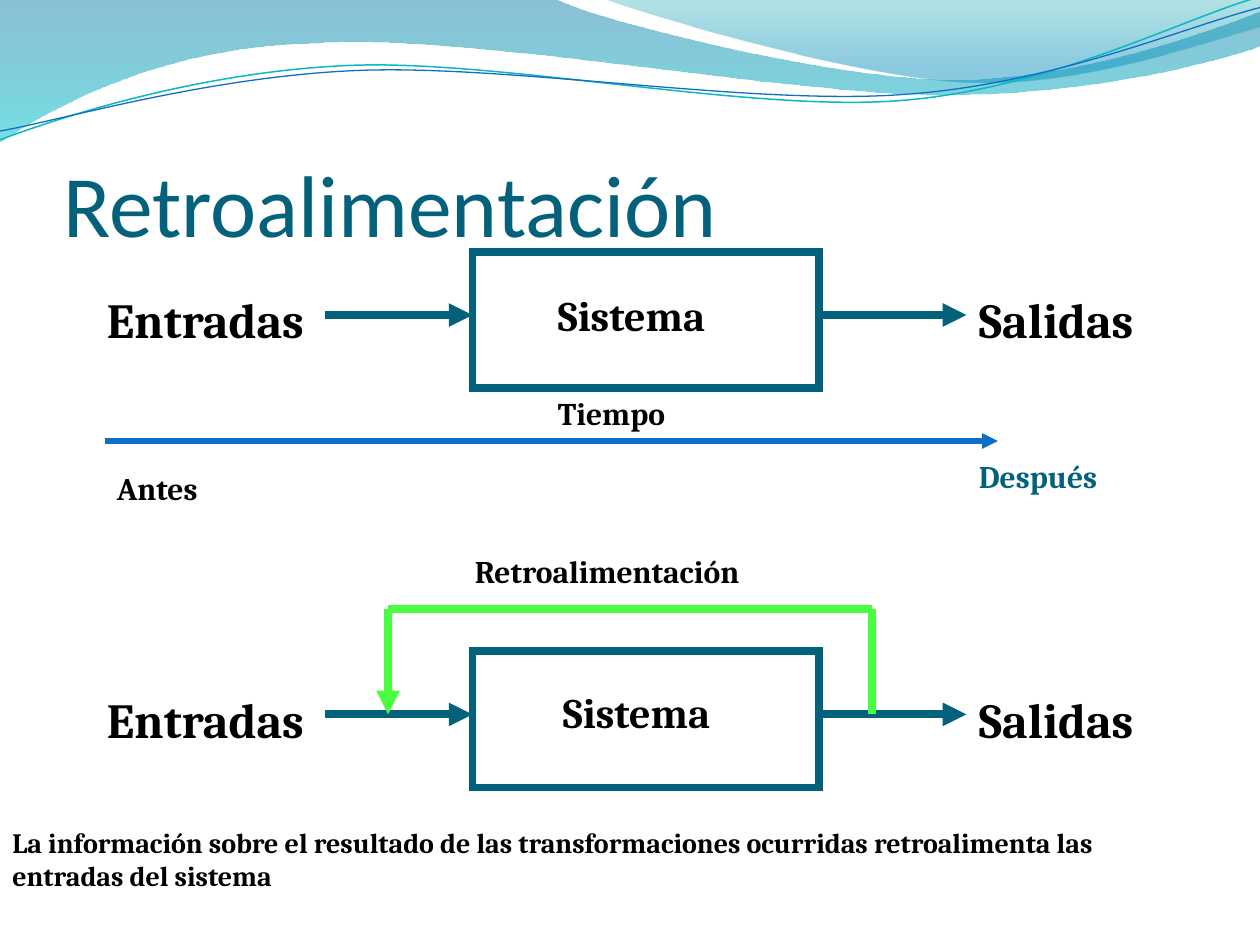
from lxml import etree
from pptx import Presentation
from pptx.dml.color import RGBColor
from pptx.enum import shapes, text
from pptx.oxml.ns import qn
from pptx.util import Inches, Pt

TEAL = RGBColor(0x04, 0x61, 0x7B)
BLUE = RGBColor(0x0F, 0x6F, 0xC6)
GREEN = RGBColor(0x49, 0xFE, 0x40)
BLACK = RGBColor(0, 0, 0)
DEEP_BLUE = RGBColor(0x00, 0x74, 0xA1)
CYAN = RGBColor(0x00, 0xC6, 0xCF)
SEA = RGBColor(0x00, 0xA1, 0xA9)
SKY = RGBColor(0x00, 0x8B, 0xBF)
AQUA = RGBColor(0x0A, 0xB8, 0xBF)

# Waves: a start point, then end points (2 values) or Bezier curves (6 values)
BAND = [(0, 0), (4.4, -0.01), (4.76, 0.17, 6.64, 0.63, 7.58, 0.63),
        (8.53, 0.63, 9.58, 0.26, 10, 0.09), (10.01, 0.36),
        (9.83, 0.44, 8.7, 0.76, 7.46, 0.75), (6.22, 0.75, 3.82, 0.28, 2.57, 0.34),
        (1.29, 0.36, 0.46, 0.83, -0.01, 1.13), (0, 0)]
CREST = [(4.79, -0.01), (5.09, 0.11, 6.82, 0.62, 7.69, 0.65),
         (8.56, 0.69, 9.61, 0.32, 10, 0.21), (10, 0), (4.79, -0.01)]
AQUA_LINE = [(0, 1.11), (0.48, 0.93, 1.58, 0.57, 2.77, 0.52),
             (3.95, 0.47, 5.93, 0.89, 7.13, 0.8), (8.33, 0.71, 9.38, 0.15, 9.98, -0.02)]
BLUE_LINE = [(0, 1.04), (0.47, 0.96, 1.64, 0.61, 2.83, 0.56),
             (4.03, 0.51, 5.97, 0.84, 7.17, 0.75), (8.36, 0.67, 9.41, 0.21, 10, 0.06)]


def add_text(s, box, *lines, size=18, color=BLACK, font="Cambria", bold=True,
             anchor=text.MSO_ANCHOR.TOP, side_inset=0.1, grow=True):
    tf = s.shapes.add_textbox(*map(Inches, box)).text_frame
    tf.word_wrap = True
    tf.auto_size = text.MSO_AUTO_SIZE.SHAPE_TO_FIT_TEXT if grow else text.MSO_AUTO_SIZE.NONE
    tf.vertical_anchor = anchor
    tf.margin_left = tf.margin_right = Inches(side_inset)
    if not grow:
        tf.margin_bottom = 0
    for i, line in enumerate(lines):
        p = tf.add_paragraph() if i else tf.paragraphs[0]
        r = p.add_run()
        r.text = line
        r.font.size, r.font.name, r.font.bold = Pt(size), font, bold
        r.font.color.rgb = color


def add_line(s, start, end, color=TEAL, width=4.5, arrow=True):
    c = s.shapes.add_connector(shapes.MSO_CONNECTOR.STRAIGHT,
                               *map(Inches, (*start, *end)))
    c.line.color.rgb, c.line.width = color, Pt(width)
    if arrow:
        etree.SubElement(c.line._get_or_add_ln(), qn("a:tailEnd"), type="triangle")
    etree.SubElement(c._element.spPr, qn("a:effectLst"))


def add_wave(s, steps, closed):
    ends = [tuple(map(Inches, step[-2:])) for step in steps]
    builder = s.shapes.build_freeform(*ends[0])
    builder.add_line_segments(ends[1:], close=closed)
    sp = builder.convert_to_shape()
    sp.shadow.inherit = False
    # Bend the segments that have control points
    segments = list(sp._element.iter(qn("a:lnTo")))
    for segment, step in zip(segments, steps[1:]):
        if len(step) == 6:
            curve = etree.Element(qn("a:cubicBezTo"))
            for x, y in zip(step[::2], step[1::2]):
                etree.SubElement(curve, qn("a:pt"), x=str(Inches(x) - sp.left),
                                 y=str(Inches(y) - sp.top))
            segment.getparent().replace(segment, curve)
    return sp


def add_waves(s):
    # Translucent bands: position, colour and opacity of each stop
    for steps, stops in ((BAND, ((0, DEEP_BLUE, 45), (1, CYAN, 55))),
                         (CREST, ((0, SEA, 30), (0.8, SKY, 45)))):
        sp = add_wave(s, steps, True)
        sp.line.fill.background()
        sp.fill.gradient()
        sp.fill.gradient_angle = 270
        for stop, (position, color, opacity) in zip(sp.fill.gradient_stops, stops):
            stop.position, stop.color.rgb = position, color
            rgb = stop._gs.find(qn("a:srgbClr"))
            etree.SubElement(rgb, qn("a:alpha"), val=str(opacity * 1000))
    # Thin lines
    for steps, color, width in ((AQUA_LINE, AQUA, 0.85), (BLUE_LINE, BLUE, 0.75)):
        sp = add_wave(s, steps, False)
        sp.fill.background()
        sp.line.color.rgb, sp.line.width = color, Pt(width)


def add_system(s, box, label_at):
    x, y, w, h = box
    sp = s.shapes.add_shape(shapes.MSO_SHAPE.RECTANGLE, *map(Inches, box))
    sp.shadow.inherit = False
    sp.fill.background()
    sp.line.color.rgb, sp.line.width = TEAL, Pt(4.5)
    etree.SubElement(sp.line._get_or_add_ln(), qn("a:miter"), lim="800000")
    add_text(s, (*label_at, 1.5, 0.5), "Sistema", size=24)
    # Input and output
    flow_y, flow = y + 0.5, 1.17
    add_text(s, (x - 3, y + 0.25, 2, 0.57), "Entradas", size=28)
    add_text(s, (x + w + flow, y + 0.25, 1.5, 0.57), "Salidas", size=28)
    for start in (x - flow, x + w):
        add_line(s, (start, flow_y), (start + flow, flow_y))


def add_timeline(s, box):
    x, y, w, h = box
    add_line(s, (x, y + 0.42), (x + w, y + 0.42), color=BLUE, width=3)
    add_text(s, (x + 3.5, y, 1.5, h), "Tiempo")
    add_text(s, (x, y + 0.59, 1.08, h), "Antes")
    add_text(s, (x + 6.84, y + 0.5, 1.67, h), "Después", color=TEAL)


def add_feedback(s, box):
    x, y, w, h = box
    corners = [(x + w, y + h), (x + w, y), (x, y), (x, y + h)]
    for i, (start, end) in enumerate(zip(corners, corners[1:])):
        add_line(s, start, end, color=GREEN, arrow=i == 2)
    add_text(s, (x + 0.59, y - 0.5, 2.92, 0.5), "Retroalimentación")


def main():
    prs = Presentation()
    prs.slide_width, prs.slide_height = Inches(10), Inches(7.5)
    s = prs.slides.add_slide(prs.slide_layouts[6])
    add_waves(s)
    add_text(s, (0.5, 0.77, 9.08, 1.25), "Retroalimentación", size=50, color=TEAL,
             font="Calibri", bold=False, anchor=text.MSO_ANCHOR.BOTTOM,
             side_inset=0, grow=False)
    add_system(s, (3.75, 2, 2.75, 1.08), (4.33, 2.25))
    add_timeline(s, (0.83, 3.08, 7.09, 0.5))
    add_system(s, (3.75, 5.17, 2.75, 1.08), (4.37, 5.4))
    add_feedback(s, (3.08, 4.83, 3.84, 0.84))
    add_text(s, (0, 6.5, 10, 0.64),
             "La información sobre el resultado de las transformaciones ocurridas retroalimenta las",
             "entradas del sistema", size=16)
    prs.save("out.pptx")


if __name__ == "__main__":
    main()
